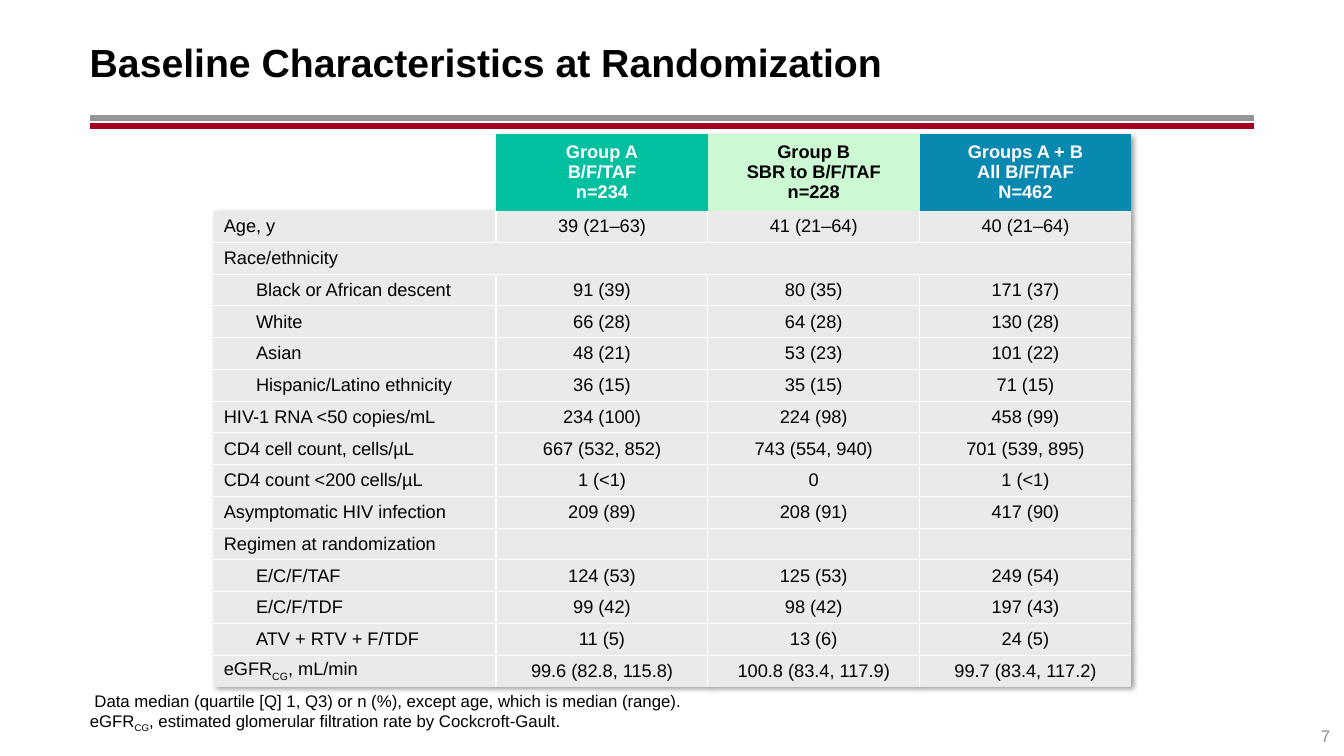
import pptx
import pptx.util
import pptx.dml.color
import pptx.enum.shapes
import pptx.enum.text
import pptx.oxml
import pptx.oxml.ns

Inches = pptx.util.Inches
Pt = pptx.util.Pt
RGBColor = pptx.dml.color.RGBColor
Align = pptx.enum.text.PP_ALIGN
Anchor = pptx.enum.text.MSO_ANCHOR
qn = pptx.oxml.ns.qn

BLACK = RGBColor(0x00, 0x00, 0x00)
WHITE = RGBColor(0xFF, 0xFF, 0xFF)
RULE_GREY = RGBColor(0x96, 0x96, 0x96)
RULE_RED = RGBColor(0xA5, 0x00, 0x21)
NUMBER_GREY = RGBColor(0x8C, 0x8C, 0x8C)
ROW_GREY = RGBColor(0xEA, 0xEA, 0xEA)
TEAL = RGBColor(0x00, 0xC0, 0xA0)
MINT = RGBColor(0xCD, 0xF8, 0xD4)
BLUE = RGBColor(0x09, 0x88, 0xB0)

DRAWING = pptx.oxml.ns.nsdecls("a")
PLAIN_TABLE_STYLE = "{2D5ABB26-0587-4C30-8999-92F81FD0307C}"
TABLE_SHADOW = (
    f'<a:effectLst {DRAWING}><a:outerShdw blurRad="50800" dist="38100" dir="2700000" '
    'algn="tl" rotWithShape="0"><a:srgbClr val="000000"><a:alpha val="40000"/>'
    '</a:srgbClr></a:outerShdw></a:effectLst>'
)

GROUPS = [
    ("Group A\vB/F/TAF\nn=234", TEAL, WHITE),
    ("Group B\vSBR to B/F/TAF\nn=228", MINT, BLACK),
    ("Groups A + B\nAll B/F/TAF\nN=462", BLUE, WHITE),
]
INDENT = 0.32
CHARACTERISTICS = [
    (0, "Age, y", "39 (21‒63)", "41 (21‒64)", "40 (21‒64)"),
    (0, "Race/ethnicity", "", "", ""),
    (INDENT, "Black or African descent", "91 (39)", "80 (35)", "171 (37)"),
    (INDENT, "White", "66 (28)", "64 (28)", "130 (28)"),
    (INDENT, "Asian", "48 (21)", "53 (23)", "101 (22)"),
    (INDENT, "Hispanic/Latino ethnicity", "36 (15)", "35 (15)", "71 (15)"),
    (0, "HIV-1 RNA <50 copies/mL", "234 (100)", "224 (98)", "458 (99)"),
    (0, "CD4 cell count, cells/µL", "667 (532, 852)", "743 (554, 940)", "701 (539, 895)"),
    (0, "CD4 count <200 cells/µL", "1 (<1)", "0", "1 (<1)"),
    (0, "Asymptomatic HIV infection", "209 (89)", "208 (91)", "417 (90)"),
    (0, "Regimen at randomization", "", "", ""),
    (INDENT, "E/C/F/TAF", "124 (53)", "125 (53)", "249 (54)"),
    (INDENT, "E/C/F/TDF", "99 (42)", "98 (42)", "197 (43)"),
    (INDENT, "ATV + RTV + F/TDF", "11 (5)", "13 (6)", "24 (5)"),
    (0, "eGFR|CG|, mL/min", "99.6 (82.8, 115.8)", "100.8 (83.4, 117.9)", "99.7 (83.4, 117.2)"),
]
RACE_ROW = 2


class SlideBuilder:
    font_name = "Arial"

    def __init__(self, slide):
        self.slide = slide

    def fill_text(self, frame, text, size, color=BLACK, bold=False, align=Align.LEFT):
        for number, content in enumerate(text.split("\n")):
            paragraph = frame.add_paragraph() if number else frame.paragraphs[0]
            paragraph.alignment = align
            paragraph.font.name = self.font_name
            paragraph.font.size = Pt(size)
            paragraph.font.bold = bold
            paragraph.font.color.rgb = color
            for line_number, line in enumerate(content.split("\v")):
                if line_number:
                    paragraph.add_line_break()
                for position, piece in enumerate(line.split("|")):
                    if piece:
                        run = paragraph.add_run()
                        run.text = piece
                        if position % 2:
                            run.font._element.set("baseline", "-25000")

    def text(self, left, top, width, height, text, size, anchor=Anchor.MIDDLE,
             side_inset=0, **style):
        box = self.slide.shapes.add_textbox(
            Inches(left), Inches(top), Inches(width), Inches(height))
        frame = box.text_frame
        frame.word_wrap = True
        frame.vertical_anchor = anchor
        frame.margin_left = frame.margin_right = Inches(side_inset)
        self.fill_text(frame, text, size, **style)

    def rule(self, left, right, y, color):
        line = self.slide.shapes.add_connector(
            pptx.enum.shapes.MSO_CONNECTOR.STRAIGHT,
            Inches(left), Inches(y), Inches(right), Inches(y))
        line.line.color.rgb = color
        line.line.width = Pt(4.25)
        line._element.spPr.append(pptx.oxml.parse_xml(f"<a:effectLst {DRAWING}/>"))

    def table(self, left, top, widths, heights):
        frame = self.slide.shapes.add_table(
            len(heights), len(widths), Inches(left), Inches(top),
            Inches(sum(widths)), Inches(sum(heights)))
        table = frame.table
        table.first_row = table.horz_banding = False
        for column, width in zip(table.columns, widths):
            column.width = Inches(width)
        for row, height in zip(table.rows, heights):
            row.height = Inches(height)
        properties = table._tbl.tblPr
        properties.find(qn("a:tableStyleId")).text = PLAIN_TABLE_STYLE
        properties.insert(0, pptx.oxml.parse_xml(TABLE_SHADOW))
        return table

    def cell(self, cell, text, fill=None, borders=(), indent=0, **style):
        cell.vertical_anchor = Anchor.MIDDLE
        cell.margin_top = cell.margin_bottom = 0
        if fill is None:
            cell.fill.background()
        else:
            cell.fill.solid()
            cell.fill.fore_color.rgb = fill
        properties = cell._tc.get_or_add_tcPr()
        for position, side in enumerate(borders):
            properties.insert(position, pptx.oxml.parse_xml(
                f'<a:ln{side} {DRAWING} w="{Pt(1)}"><a:solidFill>'
                f'<a:srgbClr val="{WHITE}"/></a:solidFill></a:ln{side}>'))
        self.fill_text(cell.text_frame, text, 13, **style)
        if indent:
            paragraph_properties = cell.text_frame.paragraphs[0]._p.get_or_add_pPr()
            paragraph_properties.set("marL", str(Inches(indent)))
            paragraph_properties.set("indent", "0")


def body_borders(row, column):
    sides = []
    if column > 0 and row != RACE_ROW:
        sides.append("L")
    if column < 3 and row != RACE_ROW:
        sides.append("R")
    if row > 1:
        sides.append("T")
    if row < len(CHARACTERISTICS):
        sides.append("B")
    return sides


def main():
    presentation = pptx.Presentation()
    presentation.slide_width = Inches(13.33)
    presentation.slide_height = Inches(7.5)
    builder = SlideBuilder(presentation.slides.add_slide(presentation.slide_layouts[6]))

    for y, color in ((1.17, RULE_GREY), (1.25, RULE_RED)):
        builder.rule(0.89, 12.44, y, color)
    builder.text(0.89, 0.18, 11.56, 0.86, "Baseline Characteristics at Randomization",
                 28, bold=True)
    builder.text(12.44, 7.1, 0.85, 0.4, "7", 12, side_inset=0.1,
                 color=NUMBER_GREY, align=Align.RIGHT)
    builder.text(
        0.89, 6.83, 11.55, 0.5,
        " Data median (quartile [Q] 1, Q3) or n (%), except age, which is median (range). \v"
        "eGFR|CG|, estimated glomerular filtration rate by Cockcroft-Gault.",
        12, anchor=Anchor.BOTTOM)

    header_height = 0.76
    row_height = (5.49 - header_height) / len(CHARACTERISTICS)
    baseline = builder.table(2.12, 1.33, [2.8] + [2.1] * 3,
                             [header_height] + [row_height] * len(CHARACTERISTICS))
    builder.cell(baseline.cell(0, 0), "")
    for column, (group, fill, color) in enumerate(GROUPS, 1):
        builder.cell(baseline.cell(0, column), group, fill,
                     color=color, bold=True, align=Align.CENTER)
    for row, (indent, *values) in enumerate(CHARACTERISTICS, 1):
        for column, value in enumerate(values):
            builder.cell(baseline.cell(row, column), value, ROW_GREY,
                         body_borders(row, column), 0 if column else indent,
                         align=Align.CENTER if column else Align.LEFT)
    baseline.cell(RACE_ROW, 0).merge(baseline.cell(RACE_ROW, 2))

    presentation.save("out.pptx")


if __name__ == "__main__":
    main()
